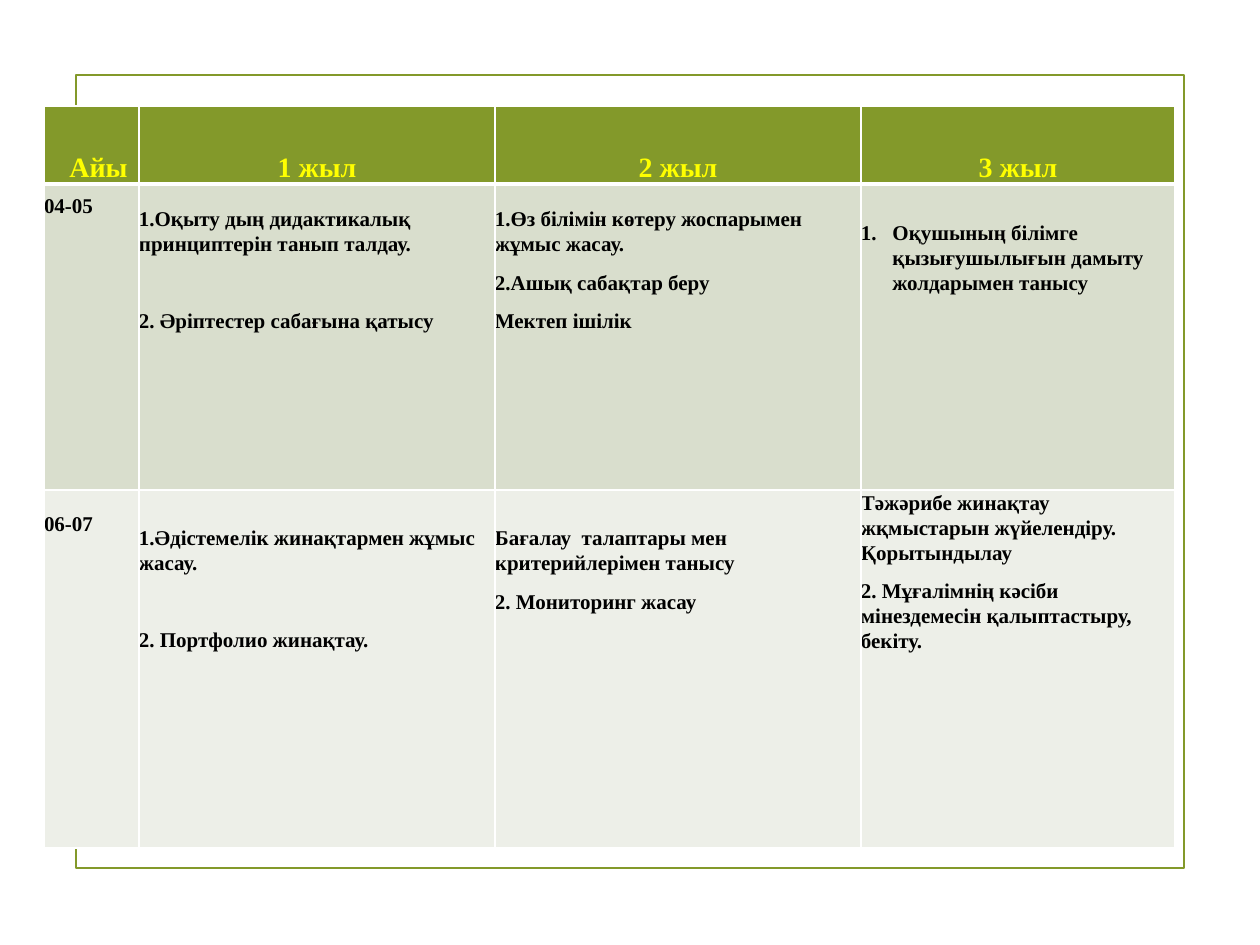
import dataclasses

import lxml.etree
import pptx
import pptx.dml.color
import pptx.enum.shapes
import pptx.enum.text
import pptx.oxml.ns
import pptx.table
import pptx.text.text
import pptx.util

EMU_PER_PX = 914400 / 126
FONT = "Times New Roman"
GREEN = "83992A"
WHITE = "FFFFFF"
YELLOW = "FFFF00"
BLACK = "000000"
COLUMN_WIDTHS = [95, 356, 366, 314]
ROW_HEIGHTS = [78, 306, 358]
ROW_FILLS = [GREEN, "D9DECD", "EDEFE8"]
HEADINGS = ["  Айы", "1 жыл", "2 жыл", "3 жыл"]


@dataclasses.dataclass
class Entry:
    text: str
    space_before: int = 0
    numbered: bool = False


@dataclasses.dataclass
class PlanCell:
    top_margin: int
    entries: list[Entry]


PLAN = [
    [
        PlanCell(9, [Entry("04-05")]),
        PlanCell(22, [
            Entry("1.Оқыту дың дидактикалық принциптерін танып талдау."),
            Entry("2. Әріптестер сабағына қатысу", space_before=22),
        ]),
        PlanCell(22, [
            Entry("1.Өз білімін көтеру жоспарымен жұмыс жасау."),
            Entry("2.Ашық сабақтар беру"),
            Entry("Мектеп ішілік"),
        ]),
        PlanCell(36, [
            Entry("Оқушының білімге қызығушылығын дамыту жолдарымен танысу", numbered=True),
        ]),
    ],
    [
        PlanCell(21, [Entry("06-07")]),
        PlanCell(35, [
            Entry("1.Әдістемелік жинақтармен жұмыс жасау."),
            Entry("2. Портфолио жинақтау.", space_before=22),
        ]),
        PlanCell(35, [
            Entry("Бағалау  талаптары мен критерийлерімен танысу"),
            Entry("2. Мониторинг жасау"),
        ]),
        PlanCell(0, [
            Entry("Тәжәрибе жинақтау жқмыстарын жүйелендіру. Қорытындылау"),
            Entry("2. Мұғалімнің кәсіби мінездемесін қалыптастыру, бекіту."),
        ]),
    ],
]


def px(length: int) -> pptx.util.Emu:
    return pptx.util.Emu(round(length * EMU_PER_PX))


def color(value: str) -> pptx.dml.color.RGBColor:
    return pptx.dml.color.RGBColor.from_string(value)


def write_text(
    paragraph: pptx.text.text._Paragraph,
    text: str,
    *,
    size: int = 12,
    text_color: str = BLACK,
    centered: bool = False,
    space_before: int = 0,
    numbered: bool = False,
) -> None:
    alignment = pptx.enum.text.PP_ALIGN
    paragraph.alignment = alignment.CENTER if centered else alignment.LEFT
    paragraph.line_spacing = 1.07
    paragraph.space_before = pptx.util.Pt(space_before)
    paragraph.space_after = pptx.util.Pt(8)
    if numbered:
        properties = paragraph._p.get_or_add_pPr()
        indent = pptx.util.Inches(0.25)
        properties.set("marL", str(indent))
        properties.set("indent", str(-indent))
        lxml.etree.SubElement(
            properties, pptx.oxml.ns.qn("a:buAutoNum"), type="arabicPeriod"
        )
    run = paragraph.add_run()
    run.text = text
    run.font.name = FONT
    run.font.size = pptx.util.Pt(size)
    run.font.bold = True
    run.font.color.rgb = color(text_color)


def set_borders(cell: pptx.table._Cell, widths: dict[str, int]) -> None:
    qn = pptx.oxml.ns.qn
    properties = cell._tc.get_or_add_tcPr()
    for side, width in widths.items():
        line = lxml.etree.SubElement(
            properties, qn(f"a:ln{side}"), w=str(pptx.util.Pt(width))
        )
        fill = lxml.etree.SubElement(line, qn("a:solidFill"))
        lxml.etree.SubElement(fill, qn("a:srgbClr"), val=WHITE)


def format_cell(cell: pptx.table._Cell, row: int, top_margin: int = 0) -> None:
    set_borders(cell, {
        "L": 1,
        "R": 1,
        "T": 3 if row == 1 else 1,
        "B": 3 if row == 0 else 1,
    })
    cell.fill.solid()
    cell.fill.fore_color.rgb = color(ROW_FILLS[row])
    cell.margin_left = cell.margin_right = cell.margin_bottom = 0
    cell.margin_top = px(top_margin)
    anchor = pptx.enum.text.MSO_ANCHOR
    cell.vertical_anchor = anchor.BOTTOM if row == 0 else anchor.TOP


def add_frame(slide: pptx.slide.Slide) -> None:
    frame = slide.shapes.add_shape(
        pptx.enum.shapes.MSO_SHAPE.RECTANGLE, px(76), px(75), px(1108), px(793)
    )
    frame.shadow.inherit = False
    frame.fill.background()
    frame.line.color.rgb = color(GREEN)
    frame.line.width = pptx.util.Pt(1.25)


def add_plan_table(slide: pptx.slide.Slide) -> None:
    table = slide.shapes.add_table(
        len(ROW_HEIGHTS), len(COLUMN_WIDTHS), px(44), px(106),
        px(sum(COLUMN_WIDTHS)), px(sum(ROW_HEIGHTS)),
    ).table
    table.horz_banding = False
    for column, width in zip(table.columns, COLUMN_WIDTHS):
        column.width = px(width)
    for row, height in zip(table.rows, ROW_HEIGHTS):
        row.height = px(height)
    for column_index, heading in enumerate(HEADINGS):
        cell = table.cell(0, column_index)
        format_cell(cell, 0)
        write_text(
            cell.text_frame.paragraphs[0], heading,
            size=16, text_color=YELLOW, centered=True,
        )
    for row_index, plan_row in enumerate(PLAN, start=1):
        for column_index, plan_cell in enumerate(plan_row):
            cell = table.cell(row_index, column_index)
            format_cell(cell, row_index, plan_cell.top_margin)
            text_frame = cell.text_frame
            for index, entry in enumerate(plan_cell.entries):
                paragraph = text_frame.add_paragraph() if index else text_frame.paragraphs[0]
                write_text(
                    paragraph, entry.text,
                    space_before=entry.space_before, numbered=entry.numbered,
                )


def main() -> None:
    presentation = pptx.Presentation()
    presentation.slide_width = px(1260)
    presentation.slide_height = px(945)
    slide = presentation.slides.add_slide(presentation.slide_layouts[6])
    add_frame(slide)
    add_plan_table(slide)
    presentation.save("out.pptx")


if __name__ == "__main__":
    main()
